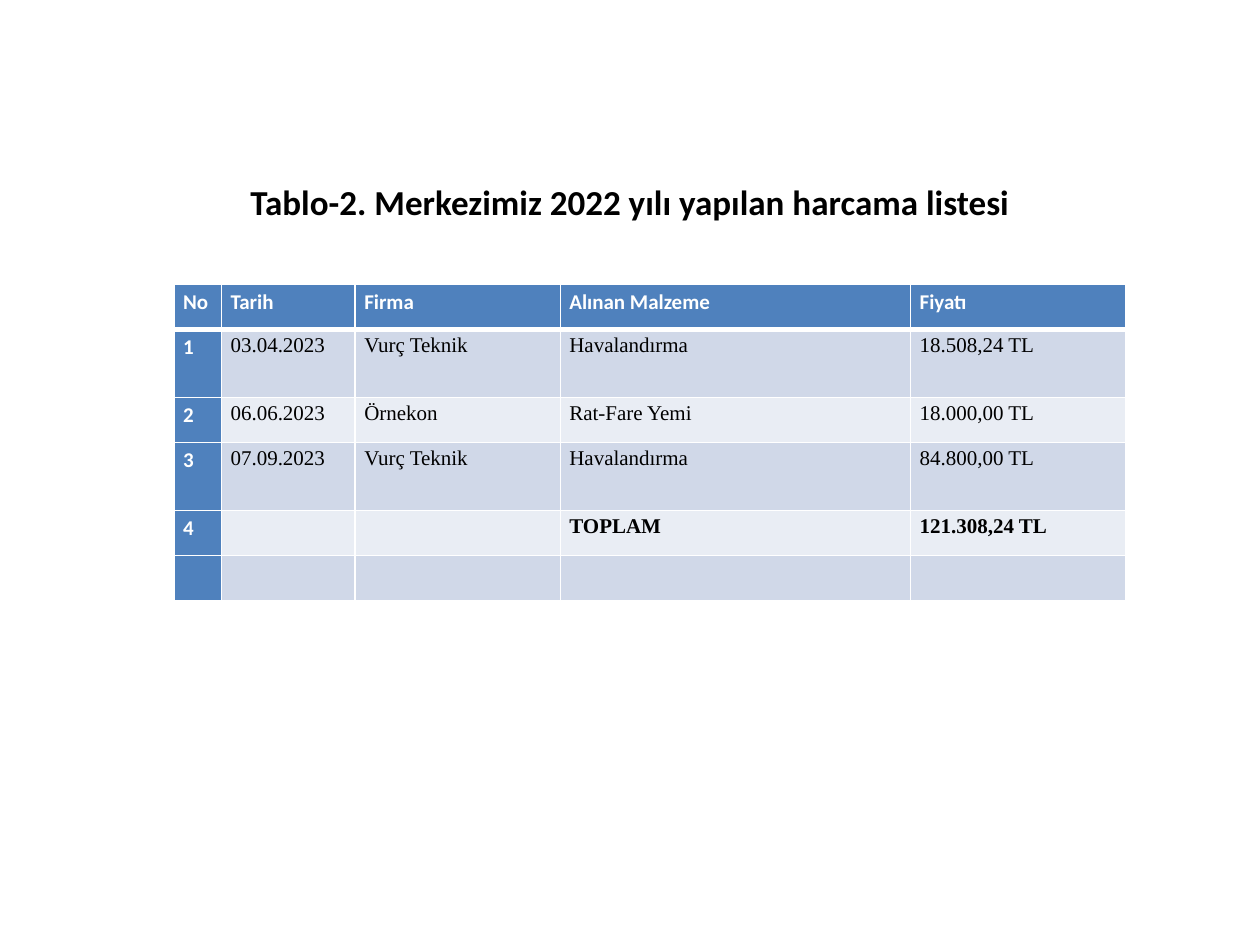
from dataclasses import dataclass

from lxml import etree
from pptx import Presentation
from pptx.dml.color import RGBColor
from pptx.enum.text import MSO_ANCHOR, PP_ALIGN
from pptx.oxml.ns import qn
from pptx.util import Pt

CENTER = PP_ALIGN.CENTER
MIDDLE = MSO_ANCHOR.MIDDLE

WHITE = RGBColor(0xFF, 0xFF, 0xFF)
BLACK = RGBColor(0x00, 0x00, 0x00)
BLUE = RGBColor(0x4F, 0x81, 0xBD)
BAND_DARK = RGBColor(0xD0, 0xD8, 0xE8)
BAND_LIGHT = RGBColor(0xE9, 0xED, 0xF4)

TITLE = "Tablo-2. Merkezimiz 2022 yılı yapılan harcama listesi"
COLUMN_WIDTHS = (27.2, 76.4, 117.2, 200.2, 122.8)
SHORT_ROW = 25.7
TALL_ROW = 38.9


@dataclass(frozen=True)
class TextStyle:
    font: str
    size: float
    color: RGBColor
    bold: bool


@dataclass(frozen=True)
class ExpenseRow:
    height: float
    texts: tuple[str, ...]
    bold: bool = False


TITLE_STYLE = TextStyle("Calibri", 20, BLACK, True)
HEADING_STYLE = TextStyle("Calibri", 12, WHITE, True)

ROWS = (
    ExpenseRow(SHORT_ROW, ("No", "Tarih", "Firma", "Alınan Malzeme", "Fiyatı")),
    ExpenseRow(TALL_ROW, ("1", "03.04.2023", "Vurç Teknik", "Havalandırma", "18.508,24 TL")),
    ExpenseRow(SHORT_ROW, ("2", "06.06.2023", "Örnekon", "Rat-Fare Yemi", "18.000,00 TL")),
    ExpenseRow(TALL_ROW, ("3", "07.09.2023", "Vurç Teknik", "Havalandırma", "84.800,00 TL")),
    ExpenseRow(SHORT_ROW, ("4", "", "", "TOPLAM", "121.308,24 TL"), bold=True),
    ExpenseRow(SHORT_ROW, ("",) * len(COLUMN_WIDTHS)),
)


def add_span(para, text: str, style: TextStyle) -> None:
    span = para.add_run()
    span.text = text
    span.font.name = style.font
    span.font.size = Pt(style.size)
    span.font.bold = style.bold
    span.font.color.rgb = style.color


def set_borders(cell, top: float, bottom: float) -> None:
    properties = cell._tc.get_or_add_tcPr()
    widths = {"a:lnL": 1, "a:lnR": 1, "a:lnT": top, "a:lnB": bottom}
    for position, (tag, width) in enumerate(widths.items()):
        line = etree.Element(qn(tag), w=str(Pt(width)))
        fill = etree.SubElement(line, qn("a:solidFill"))
        etree.SubElement(fill, qn("a:srgbClr"), val=str(WHITE))
        properties.insert(position, line)


def draw_cell(cell, text: str, style: TextStyle, color: RGBColor) -> None:
    cell.fill.solid()
    cell.fill.fore_color.rgb = color
    cell.margin_left = cell.margin_right = Pt(5.2)
    cell.margin_top = Pt(0.7)
    cell.margin_bottom = Pt(0)
    if text:
        para = cell.text_frame.paragraphs[0]
        para.line_spacing = 1.15
        add_span(para, text, style)


def draw_title(page) -> None:
    box = page.shapes.title
    box.left, box.top, box.width, box.height = Pt(0), Pt(95), Pt(720), Pt(40)
    box.text_frame.vertical_anchor = MIDDLE
    para = box.text_frame.paragraphs[0]
    para.alignment = CENTER
    add_span(para, TITLE, TITLE_STYLE)


def draw_table(page) -> None:
    frame = page.shapes.add_table(
        len(ROWS), len(COLUMN_WIDTHS), Pt(99.4), Pt(162.6),
        Pt(sum(COLUMN_WIDTHS)), Pt(sum(row.height for row in ROWS)),
    )
    table = frame.table
    for column, width in zip(table.columns, COLUMN_WIDTHS):
        column.width = Pt(width)
    for row_index, row in enumerate(ROWS):
        table.rows[row_index].height = Pt(row.height)
        band = BAND_DARK if row_index % 2 else BAND_LIGHT
        body_style = TextStyle("Times New Roman", 12, BLACK, row.bold)
        for column_index, text in enumerate(row.texts):
            heading = row_index == 0 or column_index == 0
            cell = table.cell(row_index, column_index)
            draw_cell(
                cell, text,
                HEADING_STYLE if heading else body_style,
                BLUE if heading else band,
            )
            set_borders(
                cell,
                top=3 if row_index == 1 else 1,
                bottom=3 if row_index == 0 else 1,
            )


def main() -> None:
    deck = Presentation()
    deck.slide_width, deck.slide_height = Pt(720), Pt(540)
    page = deck.slides.add_slide(deck.slide_layouts.get_by_name("Title Only"))
    draw_title(page)
    draw_table(page)
    deck.save("out.pptx")


if __name__ == "__main__":
    main()
